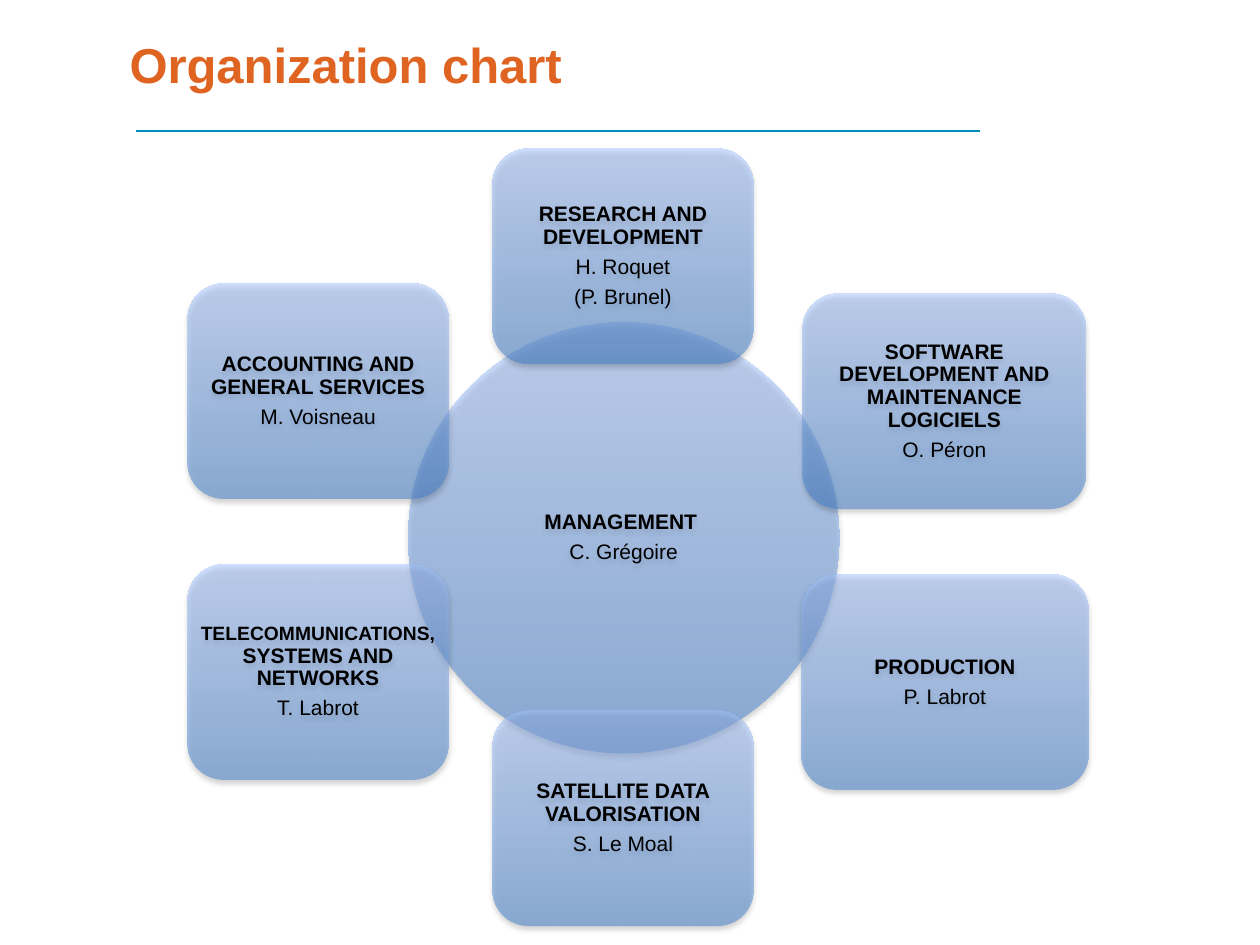
from lxml import etree
from pptx import Presentation
from pptx import util as u
from pptx.dml.color import RGBColor
from pptx.enum import shapes, text
from pptx.oxml import parse_xml
from pptx.oxml.ns import nsdecls, qn

FONT = "Arial"
ORANGE, TEAL, BLACK = "DF6421", "008FBD", "000000"
GRADIENT = ("3F7FCE", "A4C4FF")  # bottom, top
OPACITY = 50

# Ring around the management circle
CIRCLE = (3.24, 2.56, 3.42, 3.42)
BOX_HEIGHT = 1.71
ROW_STEP = 2.23
MIDDLE_X, MIDDLE_TOP, BOX_WIDTH = 3.91, 1.18, 2.07
LEFT_X, LEFT_TOP = 1.49, 2.25
RIGHT_TOP = 2.33

# Each department: box, heading as (words, size) pieces, people
DEPARTMENTS = [
    ((MIDDLE_X, MIDDLE_TOP, BOX_WIDTH, BOX_HEIGHT),
     [("RESEARCH AND DEVELOPMENT", 12)], ["H. Roquet", "(P. Brunel)"]),
    ((6.37, RIGHT_TOP, 2.25, BOX_HEIGHT),
     [("SOFTWARE DEVELOPMENT AND MAINTENANCE LOGICIELS", 12)], ["O. Péron"]),
    ((6.36, RIGHT_TOP + ROW_STEP, 2.28, BOX_HEIGHT),
     [("PRODUCTION", 12)], ["P. Labrot"]),
    ((MIDDLE_X, MIDDLE_TOP + 2 * ROW_STEP, BOX_WIDTH, BOX_HEIGHT),
     [("SATELLITE DATA VALORISATION", 12)], ["S. Le Moal"]),
    ((LEFT_X, LEFT_TOP + ROW_STEP, BOX_WIDTH, BOX_HEIGHT),
     [("TELECOMMUNICATIONS, ", 11), ("SYSTEMS AND NETWORKS", 12)], ["T. Labrot"]),
    ((LEFT_X, LEFT_TOP, BOX_WIDTH, BOX_HEIGHT),
     [("ACCOUNTING AND GENERAL SERVICES", 12)], ["M. Voisneau"]),
]


def color(value):
    return RGBColor.from_string(value)


def apply(target, values):
    for name, value in values.items():
        setattr(target, name, value)


def add_span(para, words, size, bold, hue=BLACK):
    span = para.add_run()
    span.text = words
    apply(span.font, {"name": FONT, "size": u.Pt(size), "bold": bold})
    span.font.color.rgb = color(hue)


def style_glass(shape):
    """Half-transparent vertical gradient with a soft shadow below."""
    shape.line.fill.background()
    shape.fill.gradient()
    shape.fill.gradient_angle = 90
    for stop, hue, position in zip(shape.fill.gradient_stops, GRADIENT, (0, 1)):
        stop.color.rgb = color(hue)
        stop.position = position
    properties = shape._element.spPr
    for tone in properties.iter(qn("a:srgbClr")):
        etree.SubElement(tone, qn("a:alpha"), val=str(OPACITY * 1000))
    shape.shadow.inherit = False
    properties.find(qn("a:effectLst")).append(parse_xml(
        f'<a:outerShdw {nsdecls("a")} blurRad="40000" dist="23000" dir="5400000" '
        'rotWithShape="0"><a:srgbClr val="000000"><a:alpha val="35000"/>'
        '</a:srgbClr></a:outerShdw>'))


def add_unit(page, kind, box, heading, people):
    """One unit of the organization: bold heading, then its people."""
    shape = page.shapes.add_shape(kind, *map(u.Inches, box))
    style_glass(shape)
    frame = shape.text_frame
    margin = u.Inches(0.01)
    apply(frame, {"word_wrap": True, "vertical_anchor": text.MSO_ANCHOR.MIDDLE,
                  "margin_left": margin, "margin_right": margin,
                  "margin_top": margin, "margin_bottom": margin})
    lines = [(heading, True)] + [([(person, 12)], False) for person in people]
    for index, (pieces, bold) in enumerate(lines):
        para = frame.add_paragraph() if index else frame.paragraphs[0]
        apply(para, {"alignment": text.PP_ALIGN.CENTER, "line_spacing": 0.9,
                     "space_after": u.Pt(4.2)})
        for words, size in pieces:
            add_span(para, words, size, bold)


def add_header(page, box):
    """Title with a rule beneath it."""
    left, top, width, height = box
    rule_y = u.Inches(top + 0.87)
    rule = page.shapes.add_connector(
        shapes.MSO_CONNECTOR.STRAIGHT, u.Inches(left + 6.85), rule_y,
        u.Inches(left + 0.15), rule_y)
    rule.line.color.rgb = color(TEAL)
    rule.line.width = u.Pt(1)
    etree.SubElement(rule._element.spPr, qn("a:effectLst"))

    title = page.shapes.add_textbox(*map(u.Inches, box))
    apply(title.text_frame, {"word_wrap": True, "margin_top": u.Inches(0.1),
                             "vertical_anchor": text.MSO_ANCHOR.TOP})
    add_span(title.text_frame.paragraphs[0], "Organization chart", 28, True, ORANGE)


def main():
    deck = Presentation()
    deck.slide_width, deck.slide_height = u.Inches(10), u.Inches(7.5)
    page = deck.slides.add_slide(deck.slide_layouts[6])
    add_header(page, (0.93, 0.17, 8.06, 1.09))
    # Management in the centre, departments around it
    add_unit(page, shapes.MSO_SHAPE.OVAL, CIRCLE, [("MANAGEMENT ", 12)], ["C. Grégoire"])
    for box, heading, people in DEPARTMENTS:
        add_unit(page, shapes.MSO_SHAPE.FLOWCHART_ALTERNATE_PROCESS, box, heading, people)
    deck.save("out.pptx")


if __name__ == "__main__":
    main()
